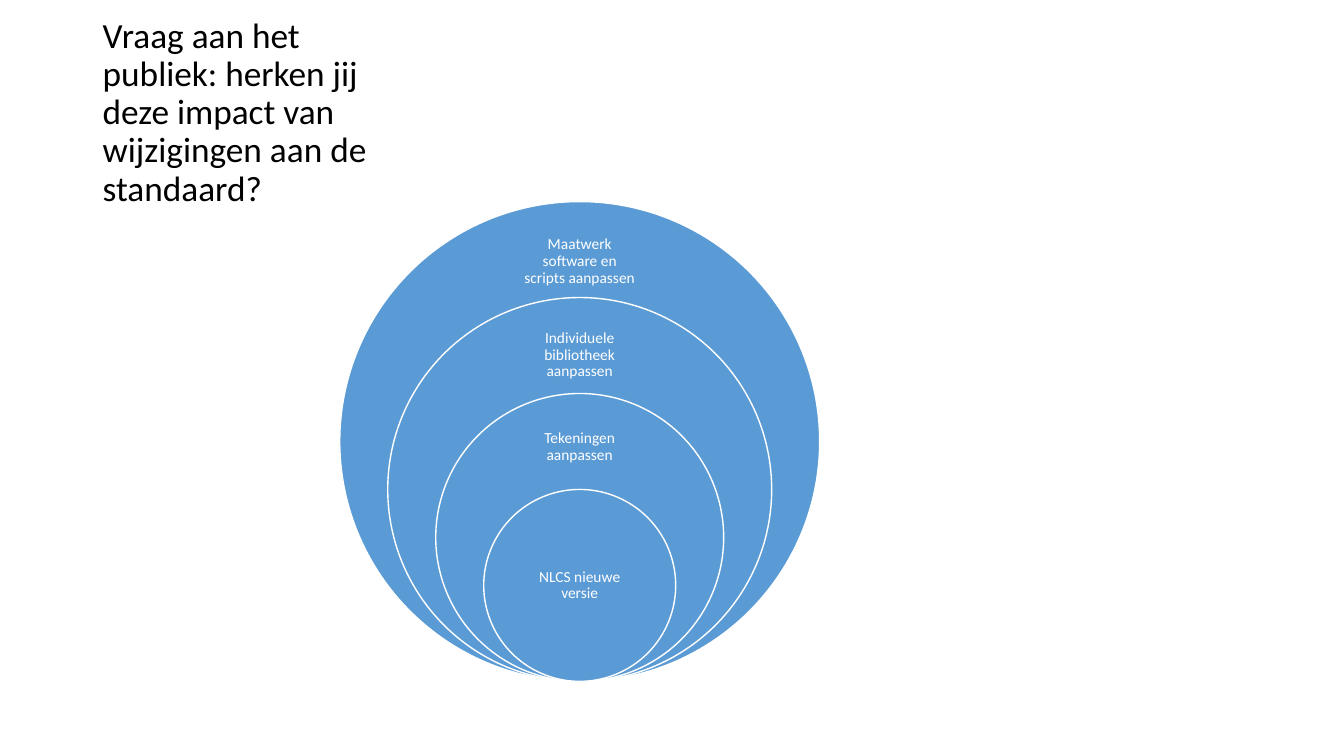
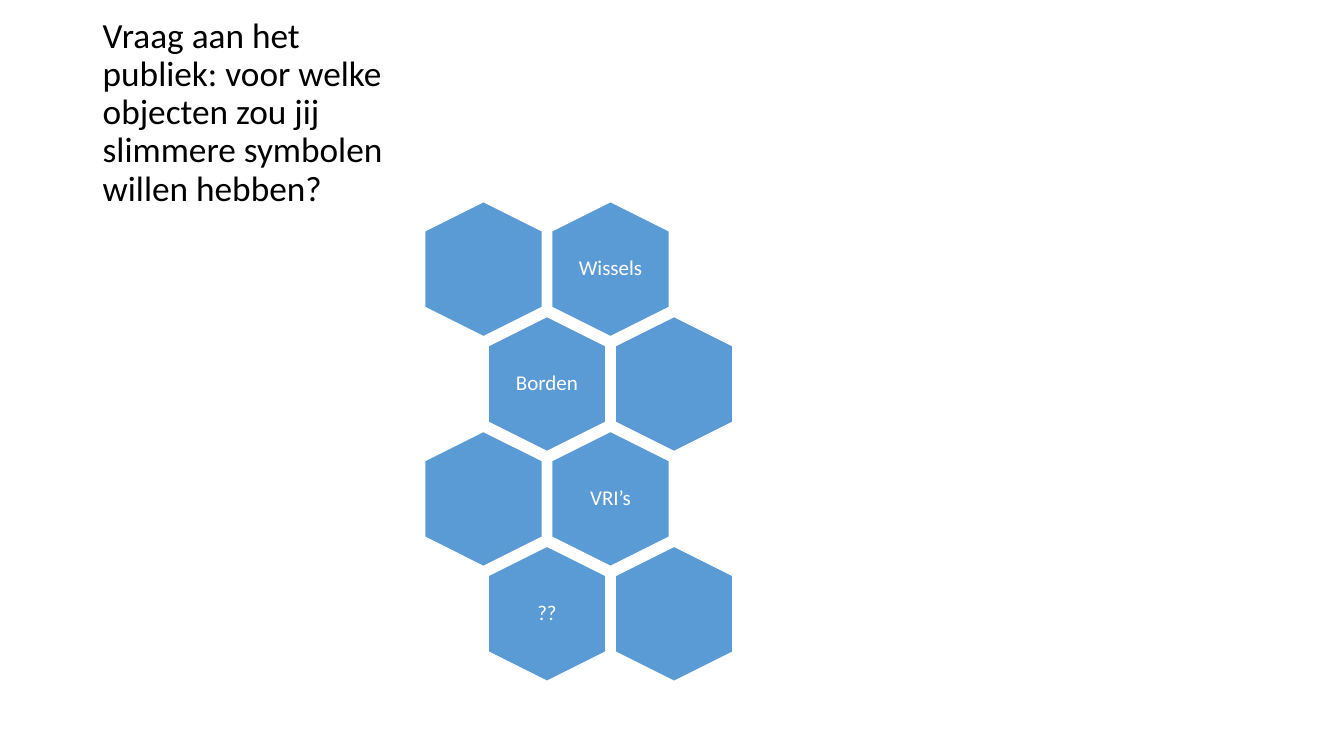
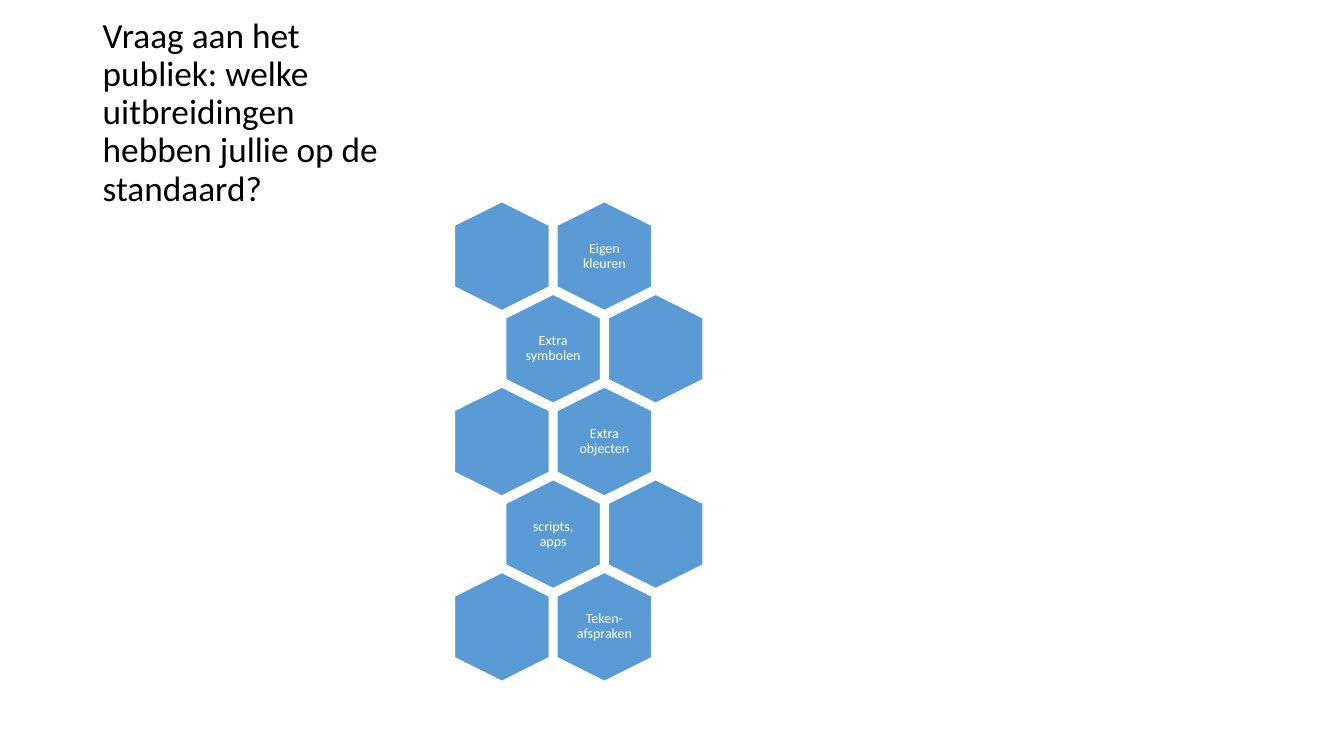
import pptx
import pptx.util
import pptx.dml.color
import pptx.enum.shapes
import pptx.enum.text

Inches = pptx.util.Inches
Pt = pptx.util.Pt
Kind = pptx.enum.shapes.MSO_SHAPE
Align = pptx.enum.text.PP_ALIGN

FONT = "Calibri"
BLUE, WHITE, BLACK = "5B9BD5", "FFFFFF", "000000"
TITLE = (0.92, 0.4, 3.21, 1.45)
DISCS = (3.37, 2, 4.76, 4.76)
COMB = (3.36, 2, 4.76, 4.76)


def color(code):
    return pptx.dml.color.RGBColor.from_string(code)


def add_text(shapes, box, text, size, code, align, inset):
    """Text box with one run, centred vertically."""
    frame = shapes.add_textbox(*map(Inches, box)).text_frame
    frame.word_wrap = True
    frame.auto_size = pptx.enum.text.MSO_AUTO_SIZE.NONE
    frame.vertical_anchor = pptx.enum.text.MSO_ANCHOR.MIDDLE
    frame.margin_left = frame.margin_right = Inches(inset[0])
    frame.margin_top = frame.margin_bottom = Inches(inset[1])
    para = frame.paragraphs[0]
    para.alignment = align
    para.line_spacing = 0.9
    run = para.add_run()
    run.text = text
    run.font.name = FONT
    run.font.size = Pt(size)
    run.font.color.rgb = color(code)


def add_label(shapes, box, text, size, inset):
    add_text(shapes, box, text, size, WHITE, Align.CENTER, (inset, inset))


def add_form(shapes, kind, box):
    """Blue shape with a thin white outline."""
    form = shapes.add_shape(kind, *map(Inches, box))
    form.shadow.inherit = False
    form.fill.solid()
    form.fill.fore_color.rgb = color(BLUE)
    form.line.color.rgb = color(WHITE)
    form.line.width = Pt(1)
    return form


def add_slide(deck, title):
    slide = deck.slides.add_slide(deck.slide_layouts[6])
    add_text(slide.shapes, TITLE, title, 25.2, BLACK, Align.LEFT, (0.1, 0.05))
    return slide


def draw_discs(slide, box, rings):
    """Nested circles that share their lowest point, from large to small."""
    left, top, width, height = box
    mid = left + width / 2
    shapes = slide.shapes.add_group_shape().shapes
    for rank, (text, drop, tall) in enumerate(rings):
        size = height * (1 - 0.2 * rank)
        head = top + height - size
        add_form(shapes, Kind.OVAL, (mid - size / 2, head, size, size))
        # Label: drop and height are shares of the circle
        add_label(shapes, (mid - 0.67, head + drop * size, 1.34, tall * size),
                  text, 11, 0.09)


def draw_comb(slide, box, words, size, inset):
    """Honeycomb with a labelled and an empty cell in each row."""
    left, top, width, height = box
    mid = left + width / 2
    tall = height / (1 + 0.85 * (len(words) - 1))
    wide, step = 0.87 * tall, 0.94 * tall
    shapes = slide.shapes.add_group_shape().shapes
    for row, word in enumerate(words):
        side = -1 if row % 2 else 1
        y = top + tall / 2 + 0.85 * tall * row
        x = mid + side * step / 4
        for spot in (x, x - side * step):
            cell = add_form(shapes, Kind.HEXAGON,
                            (spot - tall / 2, y - wide / 2, tall, wide))
            cell.adjustments[0] = 0.25
            cell.adjustments[1] = 1.1547
            cell.rotation = 90
        # Upright label over the turned cell
        w, h = 0.6 * tall, 0.69 * tall
        add_label(shapes, (x - w / 2, y - h / 2, w, h), word, size, inset)


def main():
    deck = pptx.Presentation()
    deck.slide_width, deck.slide_height = Inches(13.33), Inches(7.5)

    # Impact of changes
    slide = add_slide(deck, "Vraag aan het publiek: herken jij deze impact "
                            "van wijzigingen aan de standaard?")
    draw_discs(slide, DISCS, [
        ("Maatwerk software en scripts aanpassen", 0.05, 0.15),
        ("Individuele bibliotheek aanpassen", 0.06, 0.18),
        ("Tekeningen aanpassen", 0.07, 0.23),
        ("NLCS nieuwe versie", 0.25, 0.5),
    ])

    # Smarter symbols
    slide = add_slide(deck, "Vraag aan het publiek: voor welke objecten zou "
                            "jij slimmere symbolen willen hebben?")
    draw_comb(slide, COMB, ["Wissels", "Borden", "VRI’s", "??"], 15, 0.06)

    # Extensions
    slide = add_slide(deck, "Vraag aan het publiek: welke uitbreidingen "
                            "hebben jullie op de standaard?")
    draw_comb(slide, COMB, ["Eigen kleuren", "Extra symbolen",
                            "Extra objecten", "scripts, apps",
                            "Teken-afspraken"], 10, 0.04)

    deck.save("out.pptx")


if __name__ == "__main__":
    main()
